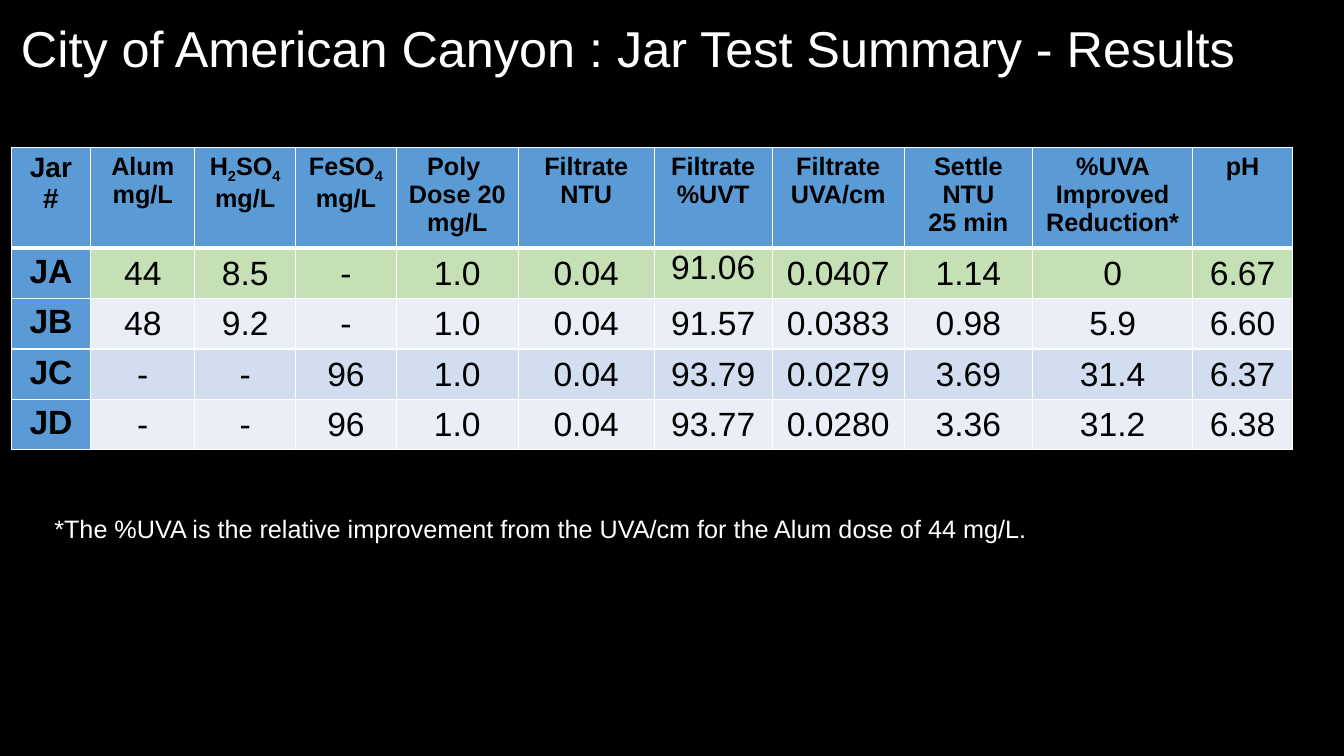
from lxml import etree
from pptx import Presentation, util as u
from pptx.dml.color import RGBColor
from pptx.enum import text
from pptx.oxml.ns import qn

FONT = "Arial"
BLACK, WHITE, BLUE = "000000", "FFFFFF", "5B9BD5"
ROW_FILLS = ["C5E0B4", "EAEFF7", "D2DEEF", "EAEFF7"]
COL_WIDTHS = [2.01, 2.62, 2.54, 2.54, 3.07, 3.43, 2.97, 3.33, 3.23, 4.04, 2.51]
ROW_HEIGHTS = [2.48] + [1.2] * 4

# An underscore lowers the character after it
HEADERS = ["Jar\n#", "Alum\nmg/L", "H_2SO_4\nmg/L", "FeSO_4\nmg/L",
           "Poly \nDose 20\nmg/L", "Filtrate\nNTU", "Filtrate\n%UVT",
           "Filtrate\nUVA/cm", "Settle\nNTU\n25 min",
           "%UVA Improved\nReduction*", "pH"]
JARS = [
    ["JA", "44", "8.5", "-", "1.0", "0.04", "91.06", "0.0407", "1.14", "0", "6.67"],
    ["JB", "48", "9.2", "-", "1.0", "0.04", "91.57", "0.0383", "0.98", "5.9", "6.60"],
    ["JC", "-", "-", "96", "1.0", "0.04", "93.79", "0.0279", "3.69", "31.4", "6.37"],
    ["JD", "-", "-", "96", "1.0", "0.04", "93.77", "0.0280", "3.36", "31.2", "6.38"],
]


def paint(fill, color):
    fill.solid()
    fill.fore_color.rgb = RGBColor.from_string(color)


def style(font, size, color, bold=False):
    font.name, font.size, font.bold = FONT, u.Pt(size), bold
    paint(font.fill, color)


def add_text(s, left, top, width, height, words, size, wrap=True):
    tf = s.shapes.add_textbox(u.Cm(left), u.Cm(top), u.Cm(width), u.Cm(height)).text_frame
    tf.word_wrap = wrap
    tf.text = words
    style(tf.paragraphs[0].runs[0].font, size, WHITE)
    return tf


def set_borders(cell, **widths):
    tc_pr = cell._tc.get_or_add_tcPr()
    for side in "LRTB":
        ln = etree.SubElement(tc_pr, qn("a:ln" + side), w=str(u.Pt(widths.get(side, 1))))
        fill = etree.SubElement(ln, qn("a:solidFill"))
        etree.SubElement(fill, qn("a:srgbClr"), val=WHITE)


def add_formula(p, line, size):
    first, *rest = line.split("_")
    pieces = [(first, False)]
    for part in rest:
        pieces += [(part[0], True), (part[1:], False)]
    for words, lowered in pieces:
        if words:
            r = p.add_run()
            r.text = words
            style(r.font, size, BLACK, True)
            if lowered:
                r.font._element.set("baseline", "-25000")


def fill_header(cell, words, size):
    for i, line in enumerate(words.split("\n")):
        tf = cell.text_frame
        p = tf.add_paragraph() if i else tf.paragraphs[0]
        p.alignment = text.PP_ALIGN.CENTER
        add_formula(p, line, size)


def fill_value(cell, words, bold):
    p = cell.text_frame.paragraphs[0]
    p.text = words
    p.alignment = text.PP_ALIGN.CENTER
    style(p.runs[0].font, 24, BLACK, bold)
    if not bold:
        cell.margin_left = cell.margin_right = cell.margin_top = u.Cm(0.02)
        cell.margin_bottom = 0
        cell.vertical_anchor = text.MSO_ANCHOR.MIDDLE


def add_results(s, left, top):
    table = s.shapes.add_table(len(ROW_HEIGHTS), len(COL_WIDTHS), u.Cm(left), u.Cm(top),
                               u.Cm(sum(COL_WIDTHS)), u.Cm(sum(ROW_HEIGHTS))).table
    table.first_row = table.horz_banding = False
    for col, width in zip(table.columns, COL_WIDTHS):
        col.width = u.Cm(width)
    for row, height in zip(table.rows, ROW_HEIGHTS):
        row.height = u.Cm(height)

    # Header row, with a heavy rule below
    for c, words in enumerate(HEADERS):
        cell = table.cell(0, c)
        set_borders(cell, B=3)
        paint(cell.fill, BLUE)
        fill_header(cell, words, 18 if c else 20)

    # One row for each jar
    for r, (values, color) in enumerate(zip(JARS, ROW_FILLS), 1):
        for c, words in enumerate(values):
            cell = table.cell(r, c)
            set_borders(cell, T=3 if r == 1 else 1)
            paint(cell.fill, color if c else BLUE)
            fill_value(cell, words, bold=c == 0)
    table.cell(1, HEADERS.index("Filtrate\n%UVT")).vertical_anchor = text.MSO_ANCHOR.TOP


def main():
    prs = Presentation()
    prs.slide_width, prs.slide_height = u.Cm(33.87), u.Cm(19.05)
    s = prs.slides.add_slide(prs.slide_layouts[6])
    paint(s.background.fill, BLACK)

    # Title
    tf = add_text(s, 0.28, 0.33, 32.51, 1.93,
                  "City of American Canyon : Jar Test Summary - Results", 36)
    tf.vertical_anchor = text.MSO_ANCHOR.MIDDLE
    tf.paragraphs[0].line_spacing = 0.9

    # Results and footnote
    add_results(s, 0.28, 3.71)
    tf = add_text(s, 1.12, 12.8, 25.25, 1.02,
                  "*The %UVA is the relative improvement from the UVA/cm "
                  "for the Alum dose of 44 mg/L.", 18, wrap=False)
    tf.auto_size = text.MSO_AUTO_SIZE.SHAPE_TO_FIT_TEXT

    prs.save("out.pptx")


if __name__ == "__main__":
    main()
